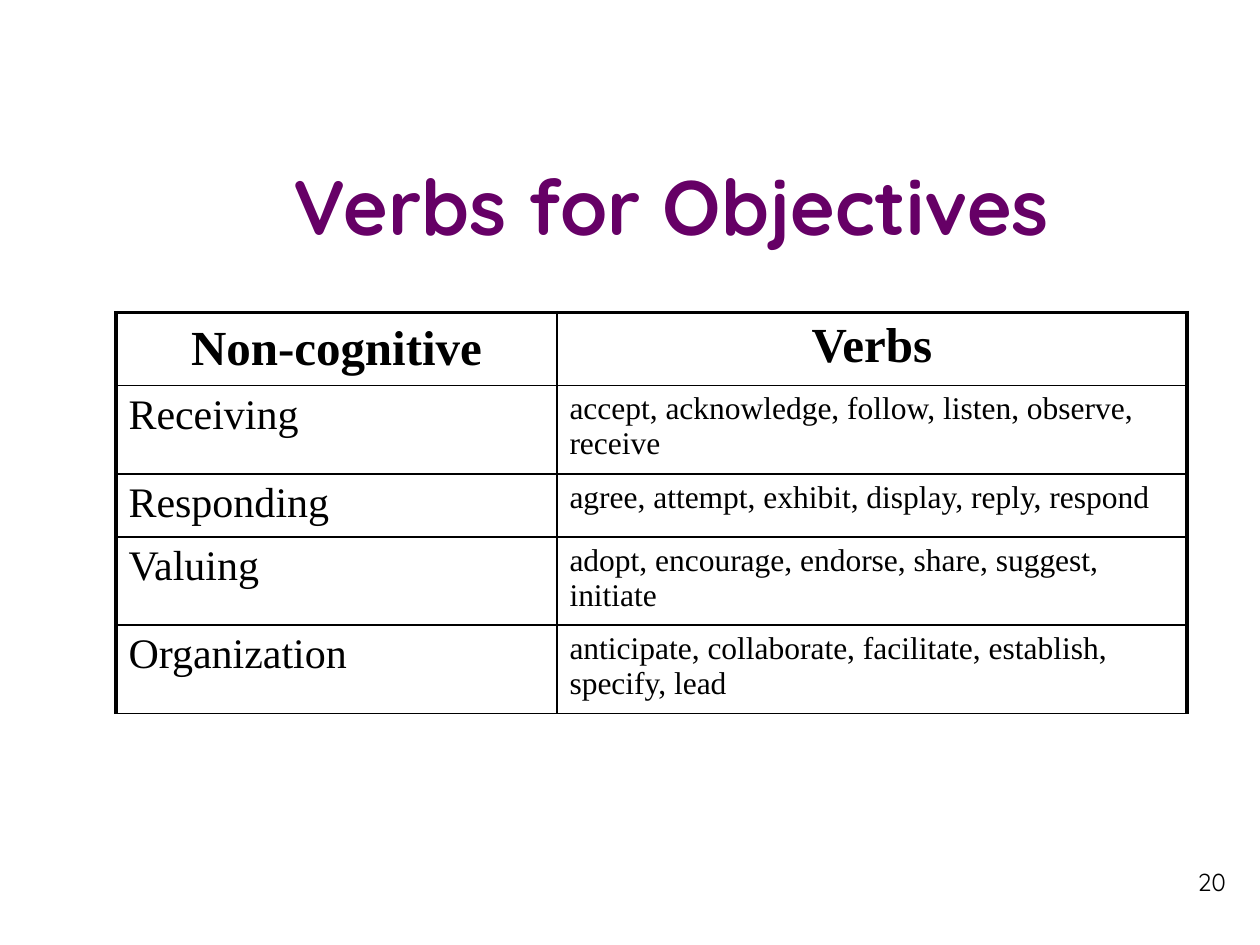
"""Build the slide of verbs for non-cognitive objectives."""
from lxml.etree import SubElement
from pptx import Presentation
from pptx.dml.color import RGBColor
from pptx.enum.text import MSO_ANCHOR as Anchor, PP_ALIGN as Align
from pptx.oxml.ns import qn
from pptx.util import Inches, Pt

PURPLE = RGBColor(0x66, 0x00, 0x66)
BLACK = RGBColor(0, 0, 0)
TITLE_FONT, TABLE_FONT = "Quicksand", "Times New Roman"
THIN, THICK = 1, 2.25

ROWS = [
    ("Non-cognitive", "Verbs"),
    ("Receiving", "accept, acknowledge, follow, listen, observe, receive"),
    ("Responding", "agree, attempt, exhibit, display, reply, respond"),
    ("Valuing", "adopt, encourage, endorse, share, suggest, initiate"),
    ("Organization", "anticipate, collaborate, facilitate, establish, specify, lead"),
]
COL_WIDTHS = [3.5, 5]
ROW_HEIGHTS = [0.58, 0.67, 0.47, 0.65, 0.68]
BODY_SIZES = [24, 18]


def write(tf, text, size, font, color=BLACK, bold=False, align=Align.LEFT):
    tf.word_wrap = True
    p = tf.paragraphs[0]
    p.text = text
    p.alignment = align
    p.font.size, p.font.name, p.font.bold = Pt(size), font, bold
    p.font.color.rgb = color


def add_text(s, box, anchor, *args, **kwargs):
    tf = s.shapes.add_textbox(*map(Inches, box)).text_frame
    tf.vertical_anchor = anchor
    write(tf, *args, **kwargs)


def set_borders(cell, widths):
    tc_pr = cell._tc.get_or_add_tcPr()
    for side, width in widths.items():
        ln = SubElement(tc_pr, qn(f"a:ln{side}"), w=str(Pt(width)))
        fill = SubElement(ln, qn("a:solidFill"))
        SubElement(fill, qn("a:srgbClr"), val=str(BLACK))


def add_verb_table(s):
    size = (sum(COL_WIDTHS), sum(ROW_HEIGHTS))
    table = s.shapes.add_table(len(ROWS), len(COL_WIDTHS),
                               *map(Inches, (0.92, 2.48, *size))).table
    for col, width in zip(table.columns, COL_WIDTHS):
        col.width = Inches(width)
    for row, height in zip(table.rows, ROW_HEIGHTS):
        row.height = Inches(height)
    for i, texts in enumerate(ROWS):
        header = i == 0
        for j, text in enumerate(texts):
            cell = table.cell(i, j)
            write(cell.text_frame, text, 28 if header else BODY_SIZES[j], TABLE_FONT,
                  bold=header, align=Align.CENTER if header else Align.LEFT)
            cell.vertical_anchor = Anchor.MIDDLE if header and j == 0 else Anchor.TOP
            set_borders(cell, {
                "L": THICK if j == 0 else THIN,
                "R": THICK if j == len(texts) - 1 else THIN,
                "T": THICK if header else THIN,
                "B": THIN,
            })
            cell.fill.background()


def main():
    prs = Presentation()
    prs.slide_width, prs.slide_height = Inches(10), Inches(7.5)
    s = prs.slides.add_slide(prs.slide_layouts[6])
    add_text(s, (0.83, 1, 9, 1.25), Anchor.MIDDLE, "Verbs for Objectives", 44,
             TITLE_FONT, PURPLE, bold=True, align=Align.CENTER)
    add_verb_table(s)
    add_text(s, (7.5, 6.83, 2.33, 0.52), Anchor.TOP, "20", 14, TITLE_FONT,
             align=Align.RIGHT)
    prs.save("out.pptx")


if __name__ == "__main__":
    main()
